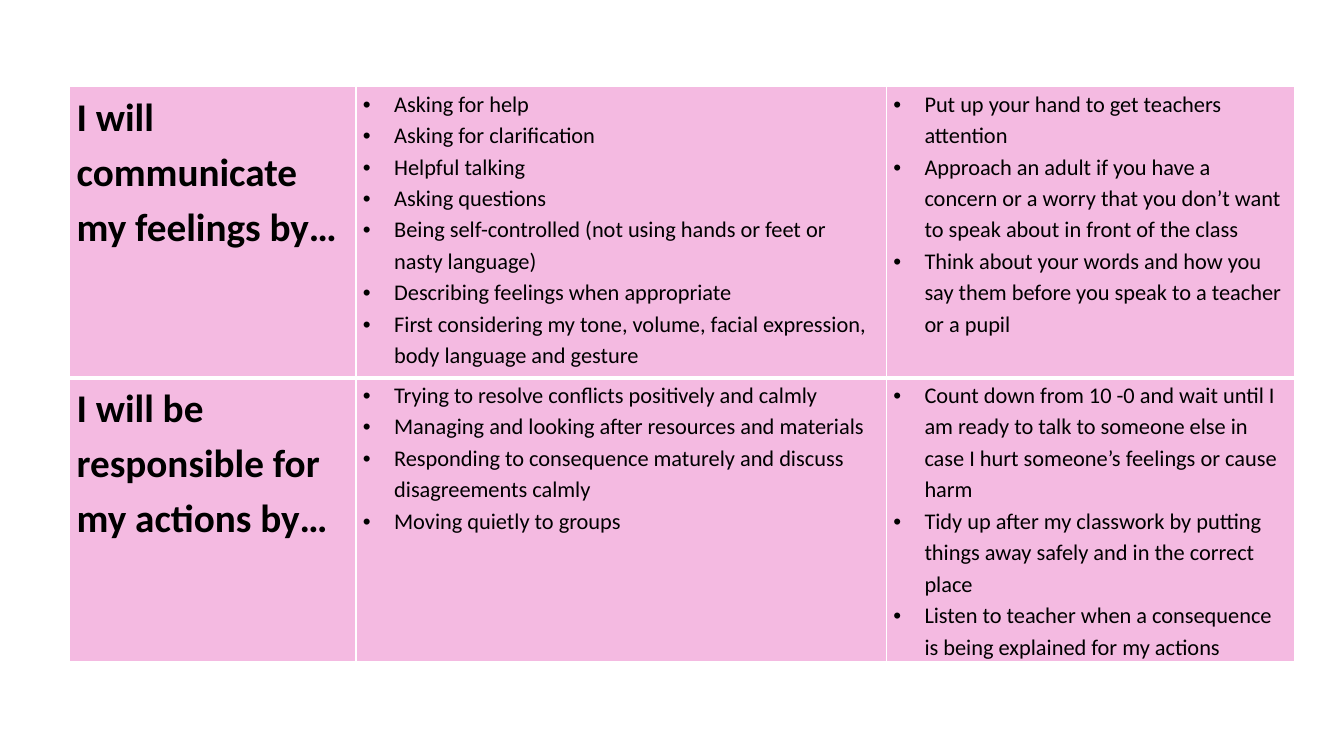
from pptx import Presentation
from pptx.dml.color import RGBColor
from pptx.oxml import parse_xml
from pptx.oxml.ns import nsdecls
from pptx.util import Emu, Pt

PX = 9144  # 100 px to the inch
PINK = RGBColor(0xF4, 0xBA, 0xE1)
BLACK = RGBColor(0, 0, 0)
WHITE = RGBColor(0xFF, 0xFF, 0xFF)

COLS = [284, 526, 405]
ROWS = [289, 281]
GOALS = [
    (
        "I will communicate my feelings by…",
        [
            "Asking for help",
            "Asking for clarification",
            "Helpful talking",
            "Asking questions",
            "Being self-controlled (not using hands or feet or nasty language)",
            "Describing feelings when appropriate",
            "First considering my tone, volume, facial expression, "
            "body language and gesture",
        ],
        [
            "Put up your hand to get teachers attention",
            "Approach an adult if you have a concern or a worry that you "
            "don’t want to speak about in front of the class",
            "Think about your words and how you say them before you speak "
            "to a teacher or a pupil",
        ],
    ),
    (
        "I will be responsible for my actions by…",
        [
            "Trying to resolve conflicts positively and calmly",
            "Managing and looking after resources and materials",
            "Responding to consequence maturely and discuss "
            "disagreements calmly",
            "Moving quietly to groups",
        ],
        [
            "Count down from 10 -0 and wait until I am ready to talk to "
            "someone else in case I hurt someone’s feelings or cause harm",
            "Tidy up after my classwork by putting things away safely and "
            "in the correct place",
            "Listen to teacher when a consequence is being explained for "
            "my actions",
        ],
    ),
]


def px(n):
    return Emu(n * PX)


def write(frame, lines, size=16, bold=False, bullet=None, indent=31):
    for i, line in enumerate(lines):
        para = frame.paragraphs[0] if i == 0 else frame.add_paragraph()
        para.line_spacing = 1.15
        if bullet:
            props = para._p.get_or_add_pPr()
            props.set("marL", str(px(indent)))
            props.set("indent", str(-px(indent)))
            props.append(parse_xml(f'<a:buFont {nsdecls("a")} typeface="Arial"/>'))
            props.append(parse_xml(f'<a:buChar {nsdecls("a")} char="{bullet}"/>'))
        run = para.add_run()
        run.text = line
        run.font.name = "Calibri"
        run.font.size = Pt(size)
        run.font.bold = bold
        run.font.color.rgb = BLACK


class Page:
    def __init__(self, deck):
        self.slide = deck.slides.add_slide(deck.slide_layouts[6])

    def table(self, left, top, cols, rows):
        frame = self.slide.shapes.add_table(
            len(rows), len(cols), px(left), px(top), px(sum(cols)), px(sum(rows))
        )
        table = frame.table
        table.first_row = table.horz_banding = False
        for col, width in zip(table.columns, cols):
            col.width = px(width)
        for row, height in zip(table.rows, rows):
            row.height = px(height)
        return table

    def cell(self, cell, lines, edges, **style):
        cell.margin_left = cell.margin_right = px(7)
        cell.margin_top = cell.margin_bottom = 0
        # Borders come before the fill
        props = cell._tc.get_or_add_tcPr()
        for side, width in edges.items():
            props.append(parse_xml(
                f'<a:ln{side} {nsdecls("a")} w="{Pt(width)}"><a:solidFill>'
                f'<a:srgbClr val="{WHITE}"/></a:solidFill></a:ln{side}>'
            ))
        cell.fill.solid()
        cell.fill.fore_color.rgb = PINK
        write(cell.text_frame, lines, **style)


def main():
    deck = Presentation()
    deck.slide_width, deck.slide_height = px(1333), px(750)
    page = Page(deck)

    # Goals with their actions, a thick rule between the rows
    table = page.table(69, 86, COLS, ROWS)
    for r, (goal, ways, steps) in enumerate(GOALS):
        edges = {"L": 1, "R": 1, "T": 3 if r else 1, "B": 1 if r else 3}
        page.cell(table.cell(r, 0), [goal], edges, size=28, bold=True)
        for c, items in enumerate((ways, steps), 1):
            page.cell(table.cell(r, c), items, edges, bullet="•")

    deck.save("out.pptx")


if __name__ == "__main__":
    main()
